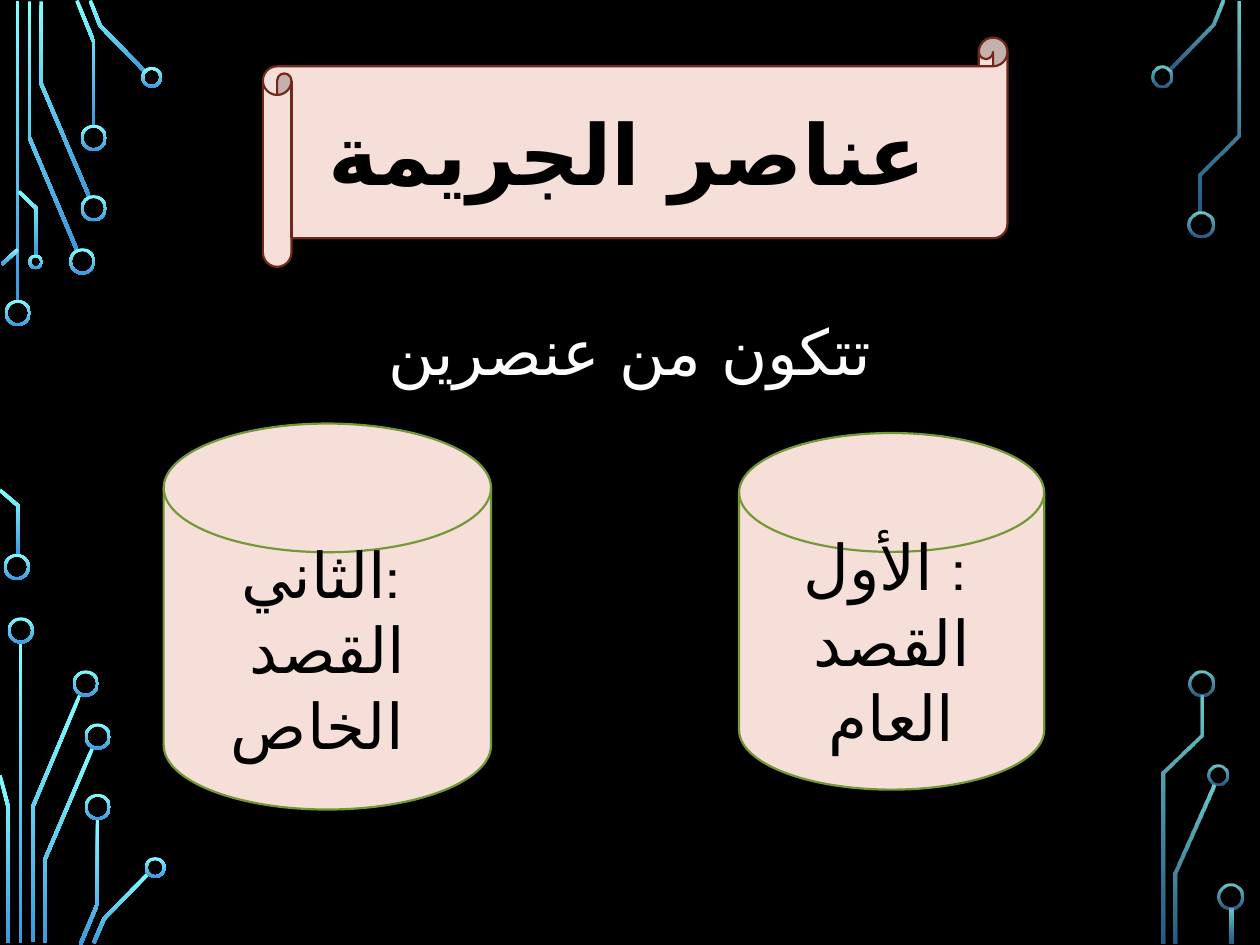
import math

import pptx
import pptx.dml.color
import pptx.enum.shapes
import pptx.enum.text
import pptx.oxml
import pptx.oxml.ns
import pptx.util

Cm, Pt = pptx.util.Cm, pptx.util.Pt
SHAPES = pptx.enum.shapes.MSO_SHAPE
qn = pptx.oxml.ns.qn

FONT, ARABIC_FONT = "Cabin", "DejaVu Sans"
BLACK, WHITE, PINK = "000000", "FFFFFF", "F6DED9"
BROWN, GREEN = "70281A", "729838"
GRADIENT = ("82FFFF", "3D97DE")
TRACE_WIDTH = 0.07
RING_SIZE, RING_THICKNESS = 0.53, 0.055

# Circuit art in centimetres: traces are centre lines, rings are (x, y[, diameter])
CIRCUITS = [
    {
        "opacity": None,
        "traces": [
            [(0.35, 0.03), (0.35, 6.1)],
            [(1.55, 5.04), (0.59, 2.77), (0.59, 0.03)],
            [(1.8, 3.97), (0.83, 1.69), (0.83, 0.03)],
            [(1.89, 2.54), (1.89, 0.84), (1.55, 0.01)],
            [(2.93, 1.45), (2.02, 0.52), (1.82, 0.01)],
            [(0.04, 5.33), (0.36, 5.03)],
            [(0.36, 11.2), (0.36, 10.19), (0, 9.88)],
            [(0.73, 5.16), (0.73, 4.2), (0.38, 3.86)],
            [(0.41, 12.95), (0.41, 19.02)],
            [(0.66, 19), (0.66, 16.27), (1.61, 14.01)],
            [(0.17, 19), (0.17, 16.28), (0, 15.63)],
            [(0.9, 19.02), (0.9, 17.34), (1.87, 15.07)],
            [(1.62, 19.04), (1.97, 18.21), (1.97, 16.51)],
            [(1.89, 19.01), (2.1, 18.52), (3, 17.6)],
        ],
        "rings": [
            (0.36, 6.31), (0.34, 11.43), (1.66, 5.27), (1.89, 4.2),
            (1.89, 2.78), (3.06, 1.56, 0.42), (0.72, 5.28, 0.3),
            (0.42, 12.71), (1.73, 13.78), (1.97, 14.85), (1.97, 16.27),
            (3.13, 17.49, 0.42),
        ],
    },
    {
        "opacity": (80, 60),
        "traces": [
            [(23.56, 1.41), (24.46, 0.5), (24.66, 0.01)],
            [(23.7, 19.02), (23.7, 17.61), (24.46, 15.84)],
            [(24.19, 4.29), (24.19, 3.52), (24.98, 2.73), (24.98, 0.03)],
            [(23.46, 19.02), (23.46, 15.58), (24.22, 14.82), (24.22, 14.02)],
            [(24.83, 19.02), (24.83, 18.31)],
        ],
        "rings": [
            (23.42, 1.54, 0.43), (24.21, 4.53), (24.55, 15.63, 0.43),
            (24.22, 13.78), (24.81, 18.08),
        ],
    },
]

SUBTITLE = ("تتكون من عنصرين", (1.27, 6.06, 22.86, 2))
PANELS = [
    (SHAPES.HORIZONTAL_SCROLL, (5.3, 0.76, 15.01, 4.62), BROWN,
     ["عناصر الجريمة "], {"size": Pt(48), "bold": True}),
    (SHAPES.FLOWCHART_MAGNETIC_DISK, (14.9, 8.73, 6.15, 7.19), GREEN,
     ["الأول : ", "القصد العام"], {"size": Pt(36)}),
    (SHAPES.FLOWCHART_MAGNETIC_DISK, (3.3, 8.54, 6.6, 7.78), GREEN,
     ["الثاني: ", "القصد الخاص "], {"size": Pt(36)}),
]


def color(value):
    return pptx.dml.color.RGBColor.from_string(value)


def fill_gradient(shape, opacity):
    """Vertical gradient without outline; opacity is a percentage per stop."""
    shape.shadow.inherit = False
    shape.line.fill.background()
    shape.fill.gradient()
    shape.fill.gradient_angle = 270
    for stop, value in zip(shape.fill.gradient_stops, GRADIENT):
        stop.color.rgb = color(value)
    if opacity:
        stops = shape._element.spPr.iter(qn("a:srgbClr"))
        for element, percent in zip(stops, opacity):
            namespace = pptx.oxml.ns.nsdecls("a")
            element.append(pptx.oxml.parse_xml(
                f'<a:alpha {namespace} val="{percent * 1000}"/>'))


def trace_outline(points):
    """Closed outline of a centre line, with mitred corners."""
    normals = []
    for (x1, y1), (x2, y2) in zip(points, points[1:]):
        length = math.hypot(x2 - x1, y2 - y1)
        normals.append(((y1 - y2) / length, (x2 - x1) / length))
    left, right = [], []
    befores, afters = normals[:1] + normals, normals + normals[-1:]
    for (x, y), (ax, ay), (bx, by) in zip(points, befores, afters):
        scale = TRACE_WIDTH / 2 / (1 + ax * bx + ay * by)
        dx, dy = (ax + bx) * scale, (ay + by) * scale
        left.append((Cm(x + dx), Cm(y + dy)))
        right.append((Cm(x - dx), Cm(y - dy)))
    return left + right[::-1]


def add_circuit(shapes, circuit):
    for points in circuit["traces"]:
        start, *rest = trace_outline(points)
        builder = shapes.build_freeform(*start)
        builder.add_line_segments(rest, close=True)
        fill_gradient(builder.convert_to_shape(), circuit["opacity"])
    for x, y, *size in circuit["rings"]:
        diameter = size[0] if size else RING_SIZE
        ring = shapes.add_shape(
            SHAPES.DONUT, Cm(x - diameter / 2), Cm(y - diameter / 2),
            Cm(diameter), Cm(diameter))
        ring.adjustments[0] = RING_THICKNESS / diameter
        fill_gradient(ring, circuit["opacity"])


def write_text(shape, lines, text_color, font_format):
    frame = shape.text_frame
    frame.word_wrap = True
    frame.vertical_anchor = pptx.enum.text.MSO_ANCHOR.MIDDLE
    for index, line in enumerate(lines):
        paragraph = frame.add_paragraph() if index else frame.paragraphs[0]
        paragraph.alignment = pptx.enum.text.PP_ALIGN.CENTER
        run = paragraph.add_run()
        run.text = line
        for name, value in {"name": FONT, **font_format}.items():
            setattr(run.font, name, value)
        run.font.color.rgb = color(text_color)
        # Arabic text takes its typeface from the complex-script element
        run._r.get_or_add_rPr().append(pptx.oxml.parse_xml(
            f'<a:cs {pptx.oxml.ns.nsdecls("a")} typeface="{ARABIC_FONT}"/>'))


def main():
    presentation = pptx.Presentation()
    presentation.slide_width, presentation.slide_height = Cm(25.4), Cm(19.05)
    slide = presentation.slides.add_slide(presentation.slide_layouts[6])
    slide.background.fill.solid()
    slide.background.fill.fore_color.rgb = color(BLACK)

    for circuit in CIRCUITS:
        add_circuit(slide.shapes, circuit)

    text, box = SUBTITLE
    subtitle = slide.shapes.add_textbox(*map(Cm, box))
    write_text(subtitle, [text], WHITE, {"size": Pt(36)})

    for preset, box, line_color, lines, font_format in PANELS:
        panel = slide.shapes.add_shape(preset, *map(Cm, box))
        panel.shadow.inherit = False
        panel.fill.solid()
        panel.fill.fore_color.rgb = color(PINK)
        panel.line.color.rgb = color(line_color)
        panel.line.width = Pt(1.25)
        write_text(panel, lines, BLACK, font_format)

    presentation.save("out.pptx")


if __name__ == "__main__":
    main()
